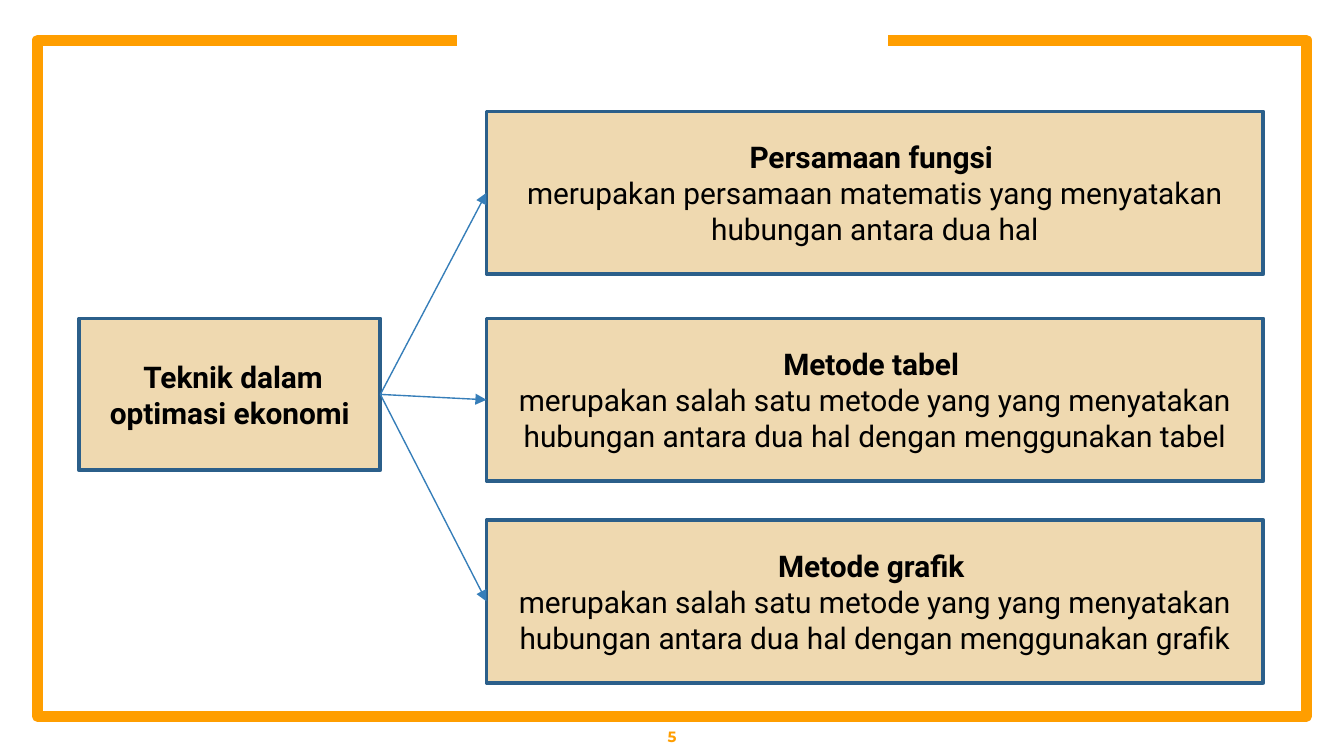
from lxml import etree
from pptx import Presentation
from pptx.dml.color import RGBColor
from pptx.enum.shapes import MSO_CONNECTOR, MSO_SHAPE
from pptx.enum.text import MSO_ANCHOR, PP_ALIGN
from pptx.oxml.ns import qn
from pptx.util import Inches, Pt

RECTANGLE = MSO_SHAPE.RECTANGLE
STRAIGHT = MSO_CONNECTOR.STRAIGHT
MIDDLE = MSO_ANCHOR.MIDDLE
CENTER = PP_ALIGN.CENTER
LEFT_SITE, RIGHT_SITE = 1, 3

WIDTH = 10
HEIGHT = WIDTH * 9 / 16
FRAME_BOTTOM = 5.33
COLORS = {
    "frame": "FF9E00",
    "box": "EFD9B0",
    "border": "2B5F8A",
    "arrow": "367EB9",
    "text": "000000",
}
HEADING = {"name": "Roboto", "size": Pt(16), "bold": True}
BODY = {**HEADING, "bold": False}
NUMBER = {"name": "Montserrat", "size": Pt(8), "bold": True}

TOPIC = " Teknik dalam optimasi ekonomi"
METHODS = [
    (0.83, "Persamaan fungsi ",
     "merupakan persamaan matematis yang menyatakan hubungan antara dua hal"),
    (2.37, "Metode tabel ",
     "merupakan salah satu metode yang yang menyatakan hubungan antara dua hal "
     "dengan menggunakan tabel"),
    (3.87, "Metode grafik ",
     "merupakan salah satu metode yang yang menyatakan hubungan antara dua hal "
     "dengan menggunakan grafik"),
]


def color(name):
    return RGBColor.from_string(COLORS[name])


def set_line(shape, name, width):
    shape.line.color.rgb = color(name)
    shape.line.width = Pt(width)


def write(shape, lines, color_name="text"):
    frame = shape.text_frame
    frame.word_wrap = True
    frame.vertical_anchor = MIDDLE
    for index, (text, style) in enumerate(lines):
        para = frame.add_paragraph() if index else frame.paragraphs[0]
        para.alignment = CENTER
        span = para.add_run()
        span.text = text
        for key, value in style.items():
            setattr(span.font, key, value)
        span.font.color.rgb = color(color_name)


def add_frame(page):
    left, right, top = 0.28, 9.72, 0.3
    corners = [(3.4, top), (left, top), (left, FRAME_BOTTOM),
               (right, FRAME_BOTTOM), (right, top), (6.61, top)]
    start, *rest = [(Inches(x), Inches(y)) for x, y in corners]
    builder = page.shapes.build_freeform(*start)
    builder.add_line_segments(rest, close=False)
    frame = builder.convert_to_shape()
    frame.shadow.inherit = False
    frame.fill.background()
    set_line(frame, "frame", 6)


def add_number(page, text):
    box = page.shapes.add_textbox(
        0, Inches(FRAME_BOTTOM), Inches(WIDTH), Inches(0.3))
    write(box, [(text, NUMBER)], "frame")
    for side in ("left", "right", "top", "bottom"):
        setattr(box.text_frame, f"margin_{side}", Inches(0.1))


def add_box(page, left, top, width, height, lines):
    box = page.shapes.add_shape(
        RECTANGLE, *(Inches(length) for length in (left, top, width, height)))
    box.shadow.inherit = False
    box.fill.solid()
    box.fill.fore_color.rgb = color("box")
    set_line(box, "border", 2)
    write(box, lines)
    return box


def add_arrow(page, source, target):
    arrow = page.shapes.add_connector(STRAIGHT, 0, 0, 0, 0)
    arrow.begin_connect(source, RIGHT_SITE)
    arrow.end_connect(target, LEFT_SITE)
    set_line(arrow, "arrow", 0.75)
    etree.SubElement(arrow.line._get_or_add_ln(), qn("a:tailEnd"), type="triangle")
    etree.SubElement(arrow._element.spPr, qn("a:effectLst"))


def main():
    deck = Presentation()
    deck.slide_width, deck.slide_height = Inches(WIDTH), Inches(HEIGHT)
    page = deck.slides.add_slide(deck.slide_layouts[6])
    add_frame(page)
    add_number(page, "5")
    topic = add_box(page, 0.59, 2.37, 2.24, 1.13, [(TOPIC, HEADING)])
    methods = [
        add_box(page, 3.62, top, 5.78, 1.21, [(name, HEADING), (meaning, BODY)])
        for top, name, meaning in METHODS
    ]
    for method in methods:
        add_arrow(page, topic, method)
    deck.save("out.pptx")


if __name__ == "__main__":
    main()
